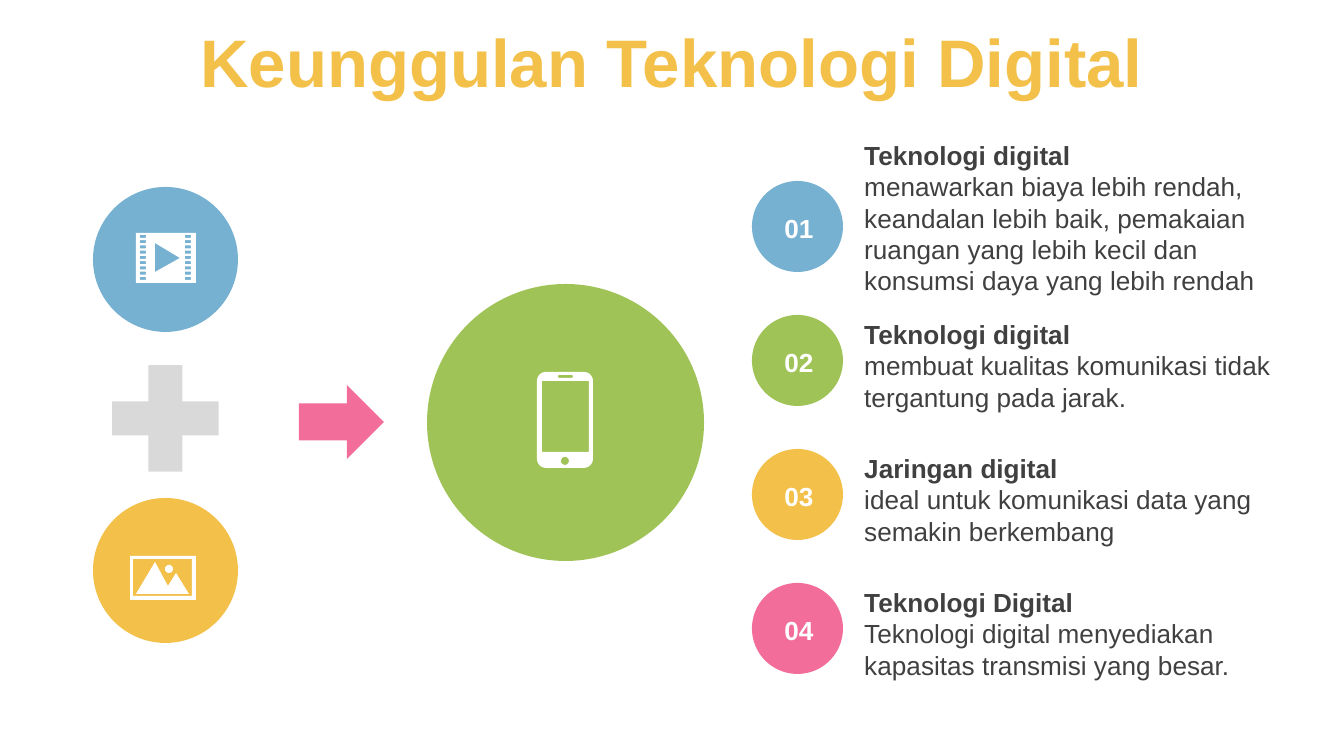
import math
from dataclasses import dataclass

from pptx import Presentation, util as u
from pptx.dml.color import RGBColor
from pptx.enum import shapes, text

PX = 914400 / 134.4


@dataclass(frozen=True)
class Theme:
    blue: str = "76B1D1"
    green: str = "A0C358"
    yellow: str = "F3C04A"
    pink: str = "F26D9A"
    grey: str = "D9D9D9"
    white: str = "FFFFFF"
    ink: str = "404040"
    font: str = "Arial"
    title_size: int = 36
    text_size: int = 14


theme = Theme()


def write(container, words, box, size=theme.text_size, color=theme.ink, bold=False,
          align=text.PP_ALIGN.LEFT, anchor=text.MSO_ANCHOR.TOP):
    frame = container.shapes.add_textbox(*(u.Emu(round(v * PX)) for v in box)).text_frame
    frame.word_wrap = True
    frame.vertical_anchor = anchor
    paragraph = frame.paragraphs[0]
    paragraph.text = words
    paragraph.alignment = align
    font = paragraph.font
    font.name, font.size, font.bold = theme.font, u.Pt(size), bold
    font.color.rgb = RGBColor.from_string(color)


def rounded(left, top, width, height, radius=0):
    """Outline points of a rectangle; a radius of half the side gives a circle."""
    steps = 8 if radius else 0
    right, bottom = left + width - radius, top + height - radius
    corners = [(right, bottom), (left + radius, bottom),
               (left + radius, top + radius), (right, top + radius)]
    points = []
    for quarter, (x, y) in enumerate(corners):
        for step in range(steps + 1):
            angle = math.pi / 2 * (quarter + step / max(steps, 1))
            points.append((x + radius * math.cos(angle), y + radius * math.sin(angle)))
    return points


prs = Presentation()
prs.slide_width, prs.slide_height = u.Emu(round(1344 * PX)), u.Emu(round(756 * PX))
slide = prs.slides.add_slide(prs.slide_layouts[6])

write(slide, "Keunggulan Teknologi Digital", (0, 4, 1344, 114), size=theme.title_size,
      color=theme.yellow, bold=True, align=text.PP_ALIGN.CENTER, anchor=text.MSO_ANCHOR.MIDDLE)

# Filled shapes: the media sum on the left, then the numbered discs
kind = shapes.MSO_SHAPE
step_colors = [theme.blue, theme.green, theme.yellow, theme.pink]
filled = [
    (kind.OVAL, (93, 187, 145, 145), theme.blue),
    (kind.OVAL, (93, 498, 145, 145), theme.yellow),
    (kind.OVAL, (427, 284, 277, 277), theme.green),
    (kind.MATH_PLUS, (93, 346, 145, 145), theme.grey),
    (kind.RIGHT_ARROW, (299, 385, 85, 74), theme.pink),
]
filled += [(kind.OVAL, (752, 181 + 134 * row, 91, 91), color)
           for row, color in enumerate(step_colors)]
for preset, box, color in filled:
    shape = slide.shapes.add_shape(preset, *(u.Emu(round(v * PX)) for v in box))
    shape.shadow.inherit = False
    shape.fill.solid()
    shape.fill.fore_color.rgb = RGBColor.from_string(color)
    shape.line.fill.background()

# White icons: the first outline is the body, the others are cut out of it or set into it
film = [rounded(136, 233, 60, 50), [(155, 243), (155, 272), (180, 258)]]
film += [rounded(left, 235 + 42 * row / 8, 6, 3) for left in (140, 185) for row in range(9)]
photo = [
    rounded(130, 556, 66, 44),
    rounded(133, 559, 59, 37),
    [(155, 562), (168, 586), (176, 573), (189, 594), (136, 594)],
    rounded(165, 565, 8, 8, 4),
]
phone = [
    rounded(537, 372, 56, 96, 9),
    rounded(542, 381, 47, 71),
    rounded(558, 375, 15, 3, 1.5),
    rounded(561, 457, 8, 8, 4),
]
for icon in (film, photo, phone):
    outlines = [[(x * 100, y * 100) for x, y in outline] for outline in icon]
    builder = slide.shapes.build_freeform(*outlines[0][0], scale=PX / 100)
    builder.add_line_segments(outlines[0][1:])
    for outline in outlines[1:]:
        builder.move_to(*outline[0])
        builder.add_line_segments(outline[1:])
    drawn = builder.convert_to_shape()
    drawn.shadow.inherit = False
    drawn.fill.solid()
    drawn.fill.fore_color.rgb = RGBColor.from_string(theme.white)
    drawn.line.fill.background()

# Advantages: heading, body, heading top, body width, body height
advantages = [
    ("Teknologi digital",
     "menawarkan biaya lebih rendah, keandalan lebih baik, pemakaian ruangan yang "
     "lebih kecil dan konsumsi daya yang lebih rendah", 133, 477, 140),
    ("Teknologi digital", "membuat kualitas komunikasi tidak tergantung pada jarak.",
     312, 466, 77),
    ("Jaringan digital", "ideal untuk komunikasi data yang semakin berkembang",
     446, 417, 77),
    ("Teknologi Digital", "Teknologi digital menyediakan kapasitas transmisi yang besar.",
     580, 417, 77),
]
for row, (heading, body, top, width, height) in enumerate(advantages):
    write(slide, f"{row + 1:02}", (766, 205 + 134 * row, 66, 46), color=theme.white,
          bold=True, align=text.PP_ALIGN.CENTER, anchor=text.MSO_ANCHOR.MIDDLE)
    group = slide.shapes.add_group_shape()
    write(group, body, (851, top + 31, width, height))
    write(group, heading, (851, top, 417, 46), bold=True)

prs.save("out.pptx")
